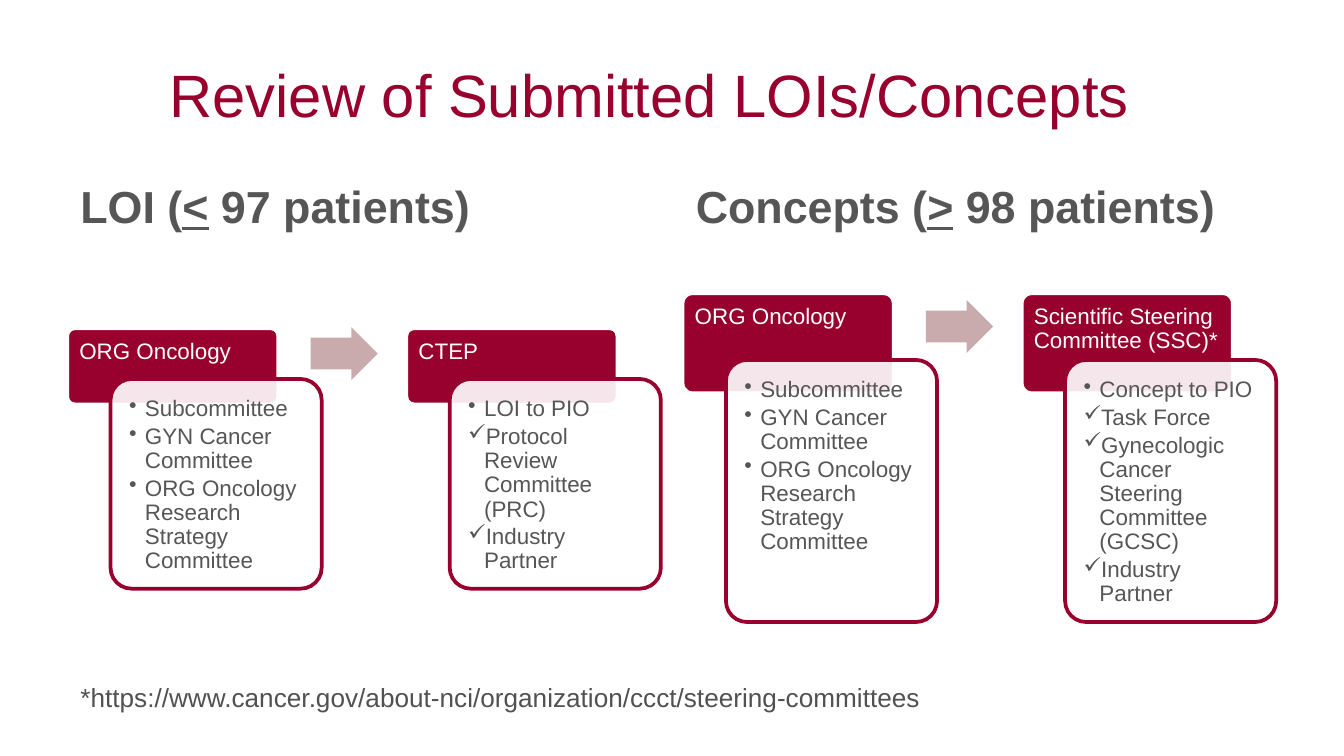
from dataclasses import dataclass

from lxml import etree
from pptx import Presentation
from pptx import util as u
from pptx.dml.color import RGBColor
from pptx.enum import shapes, text
from pptx.oxml import ns

CRIMSON, PINK, GREY, WHITE = "98012E", "CAABAD", "565656", "FFFFFF"
FONT = "Arial"
STAGE_PITCH, STAGE_WIDTH = 6.41, 3.99
CARD_SHIFT, CARD_INSET = 0.82, 0.12
ARROW_SHIFT, ARROW_WIDTH, ARROW_HEIGHT = 4.6, 1.27, 1.0
PADDING = 0.23
DOT, CHECK = "•", "✓"


@dataclass(frozen=True)
class Box:
    """A rectangle in centimetres."""
    left: float
    top: float
    width: float
    height: float

    def lengths(self) -> tuple[u.Length, ...]:
        return tuple(u.Cm(n) for n in (self.left, self.top, self.width, self.height))


@dataclass(frozen=True)
class Stage:
    name: str
    items: tuple[tuple[str, str], ...]


@dataclass(frozen=True)
class Pathway:
    heading: tuple[str, str, str]  # the middle part is underlined
    left: float
    top: float
    name_height: float
    card_height: float
    stages: tuple[Stage, ...]


ONCOLOGY = Stage("ORG Oncology", (
    (DOT, "Subcommittee"),
    (DOT, "GYN Cancer Committee"),
    (DOT, "ORG Oncology Research Strategy Committee"),
))
PATHWAYS = (
    Pathway(("LOI (", "<", " 97 patients)"), 1.27, 6.2, 0.96, 3.96, (
        ONCOLOGY,
        Stage("CTEP", (
            (DOT, "LOI to PIO"),
            (CHECK, "Protocol Review Committee (PRC)"),
            (CHECK, "Industry Partner"),
        )),
    )),
    Pathway(("Concepts (", ">", " 98 patients)"), 12.9, 5.54, 1.26, 4.95, (
        ONCOLOGY,
        Stage("Scientific Steering Committee (SSC)*", (
            (DOT, "Concept to PIO"),
            (CHECK, "Task Force"),
            (CHECK, "Gynecologic Cancer Steering Committee (GCSC)"),
            (CHECK, "Industry Partner"),
        )),
    )),
)


def color(value: str) -> RGBColor:
    return RGBColor.from_string(value)


def add_run(paragraph, words: str, size: float, ink: str, bold=False, underline=False):
    run = paragraph.add_run()
    run.text = words
    font = run.font
    font.name, font.size = FONT, u.Pt(size)
    font.bold, font.underline = bold, underline
    font.color.rgb = color(ink)


def add_text_frame(slide, box: Box, anchor=text.MSO_ANCHOR.TOP):
    frame = slide.shapes.add_textbox(*box.lengths()).text_frame
    frame.word_wrap = True
    frame.vertical_anchor = anchor
    return frame


def pad(frame, bottom: float = PADDING) -> None:
    frame.margin_left = frame.margin_top = frame.margin_right = u.Cm(PADDING)
    frame.margin_bottom = u.Cm(bottom)


def add_filled_shape(slide, kind, box: Box, fill: str, line: str | None = None):
    shape = slide.shapes.add_shape(kind, *box.lengths())
    shape.shadow.inherit = False
    shape.fill.solid()
    shape.fill.fore_color.rgb = color(fill)
    if line:
        shape.line.color.rgb = color(line)
        shape.line.width = u.Pt(2)
    else:
        shape.line.fill.background()
    return shape


def add_rounded(slide, box: Box, fill: str, line: str):
    shape = add_filled_shape(slide, shapes.MSO_SHAPE.ROUNDED_RECTANGLE, box, fill, line)
    shape.adjustments[0] = 0.1
    return shape


def set_opacity(shape, percent: int) -> None:
    fill_color = shape._element.spPr.find(ns.qn("a:solidFill"))[0]
    etree.SubElement(fill_color, ns.qn("a:alpha"), val=str(percent * 1000))


def set_bullet(paragraph, mark: str) -> None:
    """Give the paragraph a hanging bullet."""
    properties = paragraph._p.get_or_add_pPr()
    properties.set("marL", str(u.Cm(0.3)))
    properties.set("indent", str(-u.Cm(0.3)))
    etree.SubElement(properties, ns.qn("a:buChar"), char=mark)


def add_stage(slide, stage: Stage, left: float, pathway: Pathway) -> None:
    name_height = pathway.name_height
    add_rounded(slide, Box(left, pathway.top, STAGE_WIDTH, name_height * 1.5), CRIMSON, WHITE)
    frame = add_text_frame(slide, Box(left, pathway.top, STAGE_WIDTH, name_height))
    pad(frame, bottom=0.12)
    paragraph = frame.paragraphs[0]
    paragraph.line_spacing = 0.9
    add_run(paragraph, stage.name, 12, WHITE)

    card = Box(left + CARD_SHIFT, pathway.top + name_height, STAGE_WIDTH, pathway.card_height)
    set_opacity(add_rounded(slide, card, WHITE, CRIMSON), 90)
    frame = add_text_frame(slide, Box(
        card.left + CARD_INSET, card.top + CARD_INSET,
        card.width - 2 * CARD_INSET, card.height - 2 * CARD_INSET))
    pad(frame)
    for index, (mark, words) in enumerate(stage.items):
        paragraph = frame.add_paragraph() if index else frame.paragraphs[0]
        paragraph.line_spacing = 0.9
        paragraph.space_after = u.Pt(1.8)
        set_bullet(paragraph, mark)
        add_run(paragraph, words, 12, GREY)


def add_arrow(slide, left: float, middle: float) -> None:
    box = Box(left, middle - ARROW_HEIGHT / 2, ARROW_WIDTH, ARROW_HEIGHT)
    arrow = add_filled_shape(slide, shapes.MSO_SHAPE.RIGHT_ARROW, box, PINK)
    arrow.adjustments[0] = 0.6
    arrow.adjustments[1] = 0.5


def add_pathway(slide, pathway: Pathway) -> None:
    frame = add_text_frame(slide, Box(pathway.left, 3.2, 11.23, 1.32), text.MSO_ANCHOR.BOTTOM)
    for index, words in enumerate(pathway.heading):
        add_run(frame.paragraphs[0], words, 24, GREY, bold=True, underline=index == 1)
    for index, stage in enumerate(pathway.stages):
        left = pathway.left + index * STAGE_PITCH
        add_stage(slide, stage, left, pathway)
        if index < len(pathway.stages) - 1:
            add_arrow(slide, left + ARROW_SHIFT, pathway.top + pathway.name_height / 2)


def main() -> None:
    presentation = Presentation()
    presentation.slide_width, presentation.slide_height = u.Cm(25.4), u.Cm(14.28)
    slide = presentation.slides.add_slide(presentation.slide_layouts[6])

    for pathway in PATHWAYS:
        add_pathway(slide, pathway)

    title = add_text_frame(slide, Box(0.43, 0.58, 23.7, 2.39), text.MSO_ANCHOR.MIDDLE)
    title.paragraphs[0].alignment = text.PP_ALIGN.CENTER
    add_run(title.paragraphs[0], "Review of Submitted LOIs/Concepts", 32, CRIMSON)

    footnote = add_text_frame(slide, Box(1.27, 12.75, 22.23, 0.86))
    add_run(footnote.paragraphs[0],
            "*https://www.cancer.gov/about-nci/organization/ccct/steering-committees", 14, "515151")
    presentation.save("out.pptx")


if __name__ == "__main__":
    main()
